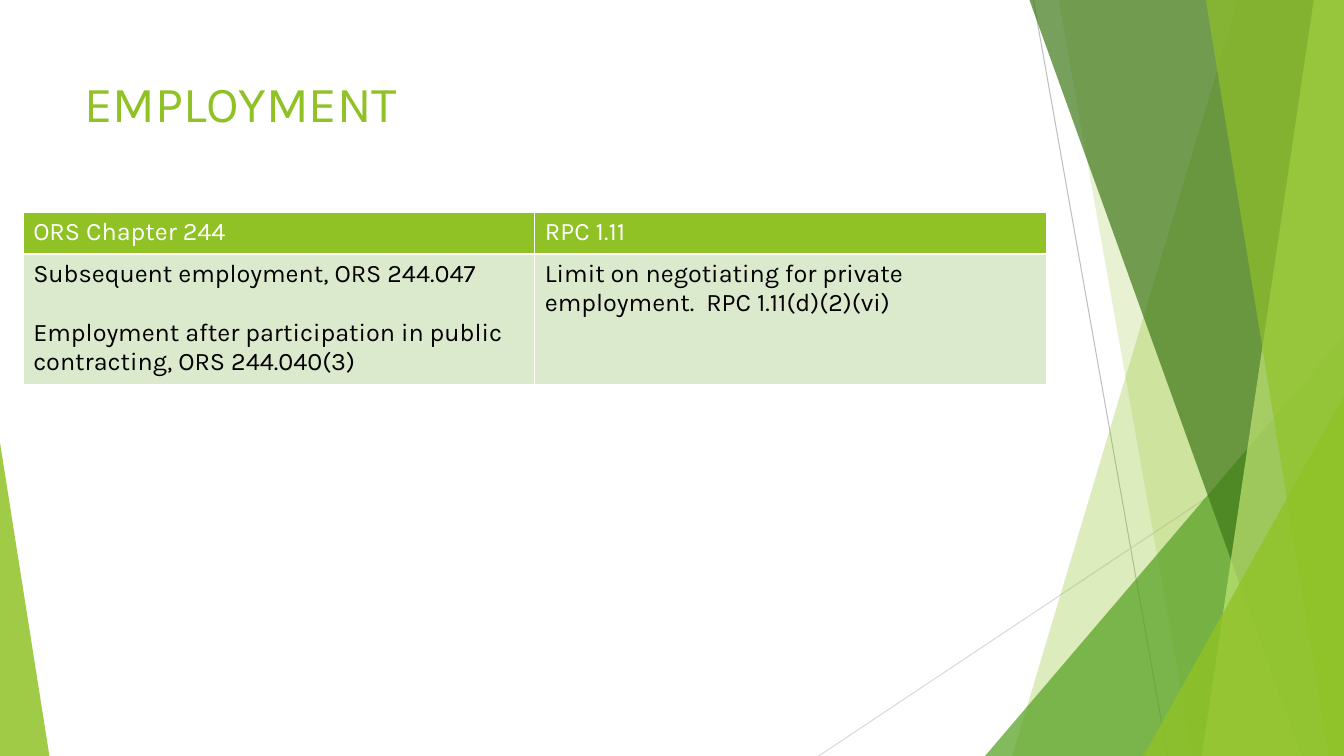
from lxml import etree
from pptx import Presentation
from pptx.dml.color import RGBColor
from pptx.enum.shapes import MSO_CONNECTOR, MSO_SHAPE
from pptx.enum.text import MSO_ANCHOR
from pptx.oxml.ns import qn
from pptx.util import Inches, Pt

STRAIGHT = MSO_CONNECTOR.STRAIGHT
TRIANGLE = MSO_SHAPE.ISOSCELES_TRIANGLE
TOP = MSO_ANCHOR.TOP

# Content
TITLE = "EMPLOYMENT"
TABLE_ROWS = [
    [["ORS Chapter 244"], ["RPC 1.11"]],
    [
        ["Subsequent employment, ORS 244.047",
         "Employment after participation in public contracting, ORS 244.040(3)"],
        ["Limit on negotiating for private employment.  RPC 1.11(d)(2)(vi)"],
    ],
]

# Theme
THEME = {
    "font": "Karla", "title_size": 36, "body_size": 18, "paragraph_gap": 21,
    "lime": "90C226", "green": "54A021", "forest": "3F7819", "pale": "C0E474",
    "tint": "DBE9CD", "white": "FFFFFF", "black": "000000",
    "gray": "BFBFBF", "light_gray": "D9D9D9",
    "hairline": 0.75, "border": 1,
}

# Grid of 1333 columns by 750 rows
UNIT = Inches(0.01)
COLUMNS, ROWS = 1333, 750
TITLE_BOX = (74, 67, 940, 144)
TABLE_LEFT, TABLE_TOP, TABLE_WIDTH = 23, 211, 1015
ROW_HEIGHTS = (41, 128)

# Decoration, back to front
LINES = [
    ((1025, 0), (1158, ROWS), "gray"),
    ((COLUMNS, 403), (812, ROWS), "light_gray"),
]
# A band runs to the right edge: left at top, left at bottom, colour, opacity.
# A triangle stands on the bottom edge: left, top, width, apex, colour, opacity.
FACETS = [
    ("band", (1228, 1004), "lime", 30),
    ("band", (1050, 1183), "lime", 20),
    ("triangle", (977, 333, 356, 1), "green", 72),
    ("band", (1021, 1291), "forest", 70),
    ("band", (1303, 1192), "pale", 70),
    ("band", (1196, 1318), "lime", 65),
    ("triangle", (1134, 393, 199, 1), "lime", 80),
    ("triangle", (0, 439, 49, 0), "lime", 85),
]


def color(name):
    return RGBColor.from_string(THEME[name])


def to_emu(*cells):
    return [cell * UNIT for cell in cells]


def paint(shape, color_name, opacity):
    shape.shadow.inherit = False
    shape.line.fill.background()
    shape.fill.solid()
    shape.fill.fore_color.rgb = color(color_name)
    color_element = shape.fill._xPr.find(".//" + qn("a:srgbClr"))
    etree.SubElement(color_element, qn("a:alpha"), val=str(opacity * 1000))


def add_line(slide, start, end, color_name):
    connector = slide.shapes.add_connector(STRAIGHT, *to_emu(*start, *end))
    connector.line.color.rgb = color(color_name)
    connector.line.width = Pt(THEME["hairline"])
    etree.SubElement(connector._element.spPr, qn("a:effectLst"))


def add_band(slide, top_left, bottom_left):
    corners = [(top_left, 0), (COLUMNS, 0), (COLUMNS, ROWS), (bottom_left, ROWS)]
    points = [to_emu(*corner) for corner in corners]
    builder = slide.shapes.build_freeform(*points[0], scale=1.0)
    builder.add_line_segments(points[1:], close=True)
    return builder.convert_to_shape()


def add_triangle(slide, left, top, width, apex):
    shape = slide.shapes.add_shape(TRIANGLE, *to_emu(left, top, width, ROWS - top))
    shape.adjustments[0] = apex
    return shape


def write(text_frame, texts, size, color_name):
    text_frame.word_wrap = True
    for index, text in enumerate(texts):
        paragraph = text_frame.add_paragraph() if index else text_frame.paragraphs[0]
        if index:
            paragraph.space_before = Pt(THEME["paragraph_gap"])
        run = paragraph.add_run()
        run.text = text
        run.font.color.rgb = color(color_name)
        formats = {"name": THEME["font"], "size": Pt(THEME[size]), "bold": False}
        for attribute, value in formats.items():
            setattr(run.font, attribute, value)


def add_borders(cell):
    properties = cell._tc.get_or_add_tcPr()
    for index, side in enumerate(("lnL", "lnR", "lnT", "lnB")):
        border = etree.Element(qn("a:" + side), w=str(Pt(THEME["border"])))
        fill = etree.SubElement(border, qn("a:solidFill"))
        etree.SubElement(fill, qn("a:srgbClr"), val=THEME["white"])
        properties.insert(index, border)


def add_rules_table(slide):
    column_count = len(TABLE_ROWS[0])
    frame = slide.shapes.add_table(
        len(TABLE_ROWS), column_count,
        *to_emu(TABLE_LEFT, TABLE_TOP, TABLE_WIDTH, sum(ROW_HEIGHTS)))
    table = frame.table
    for row, height in zip(table.rows, ROW_HEIGHTS):
        row.height = height * UNIT
    for row_index, row_content in enumerate(TABLE_ROWS):
        fill_name, text_name = ("tint", "black") if row_index else ("lime", "white")
        for column_index, texts in enumerate(row_content):
            cell = table.cell(row_index, column_index)
            cell.fill.solid()
            cell.fill.fore_color.rgb = color(fill_name)
            add_borders(cell)
            write(cell.text_frame, texts, "body_size", text_name)


def main():
    presentation = Presentation()
    presentation.slide_width, presentation.slide_height = to_emu(COLUMNS, ROWS)
    blank_layout = presentation.slide_layouts[6]
    slide = presentation.slides.add_slide(blank_layout)

    # Background facets
    for line in LINES:
        add_line(slide, *line)
    draw = {"band": add_band, "triangle": add_triangle}
    for kind, geometry, color_name, opacity in FACETS:
        paint(draw[kind](slide, *geometry), color_name, opacity)

    # Title and table
    title = slide.shapes.add_textbox(*to_emu(*TITLE_BOX))
    title.text_frame.vertical_anchor = TOP
    write(title.text_frame, [TITLE], "title_size", "lime")
    add_rules_table(slide)

    presentation.save("out.pptx")


if __name__ == "__main__":
    main()
